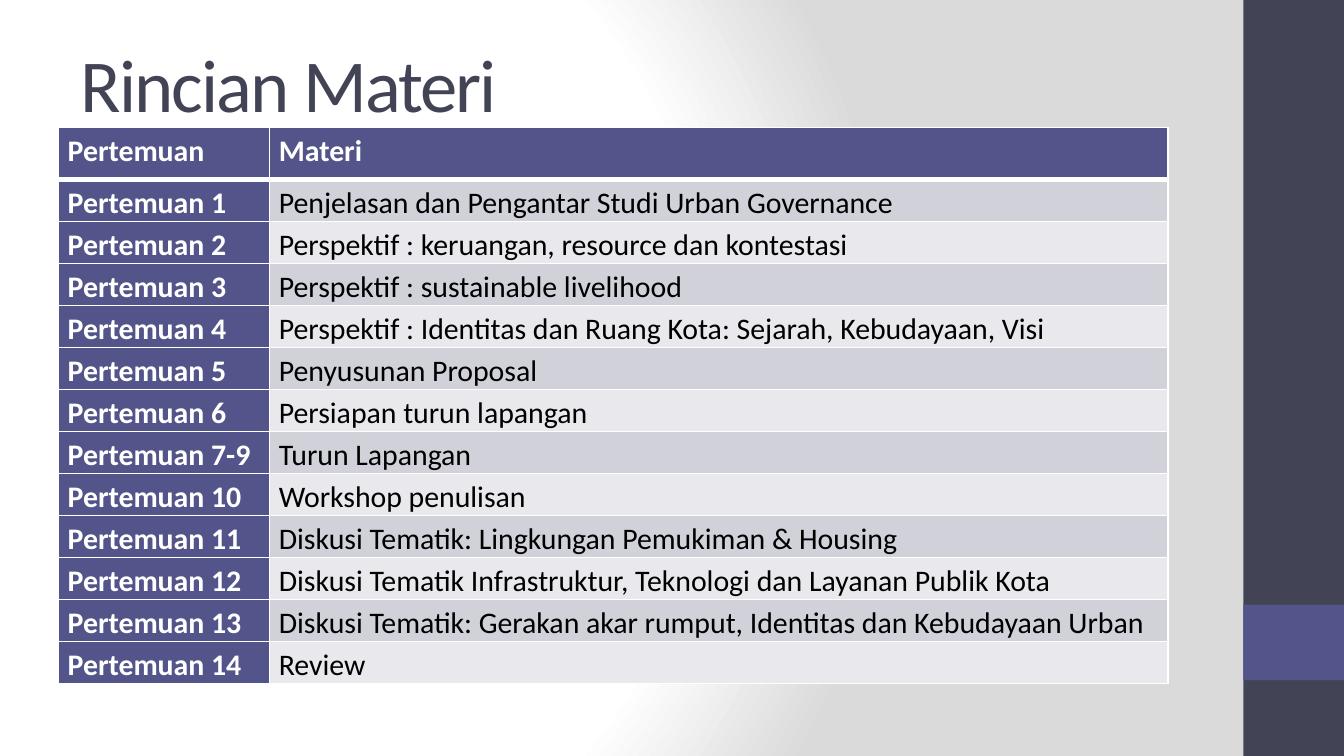
"""Build the "Rincian Materi" course outline slide."""
from pptx import Presentation
from pptx.dml.color import RGBColor
from pptx.enum.shapes import MSO_SHAPE as Shape
from pptx.enum.text import MSO_ANCHOR as Anchor, MSO_AUTO_SIZE as AutoSize, PP_ALIGN as Align
from pptx.oxml import parse_xml
from pptx.oxml.ns import nsdecls, qn
from pptx.util import Cm, Pt

TITLE = "Rincian Materi"
HEADER = ("Pertemuan", "Materi")
MEETINGS = [
    ("1", "Penjelasan dan Pengantar Studi Urban Governance"),
    ("2", "Perspektif : keruangan, resource dan kontestasi"),
    ("3", "Perspektif : sustainable livelihood"),
    ("4", "Perspektif : Identitas dan Ruang Kota: Sejarah, Kebudayaan, Visi"),
    ("5", "Penyusunan Proposal"),
    ("6", "Persiapan turun lapangan"),
    ("7-9", "Turun Lapangan"),
    ("10", "Workshop penulisan"),
    ("11", "Diskusi Tematik: Lingkungan Pemukiman & Housing"),
    ("12", "Diskusi Tematik Infrastruktur, Teknologi dan Layanan Publik Kota"),
    ("13", "Diskusi Tematik: Gerakan akar rumput, Identitas dan Kebudayaan Urban"),
    ("14", "Review"),
]

WHITE = RGBColor(0xFF, 0xFF, 0xFF)
BLACK = RGBColor(0, 0, 0)
GRAY = RGBColor(0xDA, 0xDA, 0xDA)
SLATE = RGBColor(0x42, 0x44, 0x56)
PURPLE = RGBColor(0x53, 0x54, 0x8A)
BANDS = (RGBColor(0xD1, 0xD1, 0xDA), RGBColor(0xE9, 0xE9, 0xED))
FONT = "Calibri"

SLIDE_WIDTH, SLIDE_HEIGHT = Cm(25.4), Cm(14.29)
BAR_WIDTH = Cm(1.9)
COLUMN_WIDTHS = (Cm(3.99), Cm(16.99))
HEADER_HEIGHT, ROW_HEIGHT = Cm(0.98), Cm(0.79)


def write_text(frame, text, size=16, color=BLACK, bold=False, line_spacing=None, tracking=None):
    paragraph = frame.paragraphs[0]
    paragraph.alignment = Align.LEFT
    paragraph.line_spacing = line_spacing
    run = paragraph.add_run()
    run.text = text
    run.font.name = FONT
    run.font.size = Pt(size)
    run.font.bold = bold
    run.font.color.rgb = color
    if tracking is not None:
        run.font._element.set("spc", str(int(tracking * 100)))


def paint_background(slide):
    slide.background.fill.gradient()
    gradient = slide.element.find(".//" + qn("a:gradFill"))
    stops = "".join(
        f'<a:gs pos="{position * 1000}"><a:srgbClr val="{color}"/></a:gs>'
        for position, color in ((0, WHITE), (75, WHITE), (100, GRAY))
    )
    gradient.getparent().replace(gradient, parse_xml(
        f'<a:gradFill {nsdecls("a")} rotWithShape="1"><a:gsLst>{stops}</a:gsLst>'
        '<a:path path="circle"><a:fillToRect l="20000" t="50000" r="100000" b="50000"/></a:path>'
        "</a:gradFill>"
    ))


def add_bar(slide, top, height, color):
    bar = slide.shapes.add_shape(Shape.RECTANGLE, SLIDE_WIDTH - BAR_WIDTH, top, BAR_WIDTH, height)
    bar.shadow.inherit = False
    bar.fill.solid()
    bar.fill.fore_color.rgb = color
    bar.line.fill.background()


def add_title(slide):
    title = slide.shapes.title
    title.left, title.top, title.width, title.height = Cm(1.27), Cm(0.58), Cm(21.16), Cm(1.98)
    frame = title.text_frame
    frame.auto_size = AutoSize.NONE
    frame.vertical_anchor = Anchor.MIDDLE
    write_text(frame, TITLE, size=40, color=SLATE, tracking=-1)


def format_cell(cell, text, fill, color, bold, bottom_width):
    cell.margin_left = cell.margin_right = Cm(0.18)
    cell.margin_top = cell.margin_bottom = 0
    write_text(cell.text_frame, text, color=color, bold=bold, line_spacing=1.15)
    properties = cell._tc.get_or_add_tcPr()
    for side, width in (("L", 1), ("R", 1), ("T", 1), ("B", bottom_width)):
        properties.append(parse_xml(
            f'<a:ln{side} {nsdecls("a")} w="{Pt(width)}"><a:solidFill>'
            f'<a:srgbClr val="{WHITE}"/></a:solidFill></a:ln{side}>'
        ))
    cell.fill.solid()
    cell.fill.fore_color.rgb = fill


def add_schedule(slide):
    rows = [HEADER] + [(f"{HEADER[0]} {number}", topic) for number, topic in MEETINGS]
    height = HEADER_HEIGHT + ROW_HEIGHT * len(MEETINGS)
    table = slide.shapes.add_table(
        len(rows), len(HEADER), Cm(1.1), Cm(2.41), sum(COLUMN_WIDTHS), height
    ).table
    for column, width in zip(table.columns, COLUMN_WIDTHS):
        column.width = width
    for row_index, texts in enumerate(rows):
        is_header = row_index == 0
        table.rows[row_index].height = HEADER_HEIGHT if is_header else ROW_HEIGHT
        for column_index, text in enumerate(texts):
            strong = is_header or column_index == 0
            format_cell(
                table.cell(row_index, column_index), text,
                fill=PURPLE if strong else BANDS[(row_index - 1) % 2],
                color=WHITE if strong else BLACK,
                bold=strong,
                bottom_width=3 if is_header else 1,
            )
            if row_index == 1:
                top_line = table.cell(1, column_index)._tc.tcPr.find(qn("a:lnT"))
                top_line.set("w", str(Pt(3)))


def main():
    presentation = Presentation()
    presentation.slide_width, presentation.slide_height = SLIDE_WIDTH, SLIDE_HEIGHT
    slide = presentation.slides.add_slide(presentation.slide_layouts.get_by_name("Title Only"))
    paint_background(slide)
    add_bar(slide, 0, SLIDE_HEIGHT, SLATE)
    add_bar(slide, Cm(11.43), Cm(1.43), PURPLE)
    add_title(slide)
    add_schedule(slide)
    presentation.save("out.pptx")


if __name__ == "__main__":
    main()
